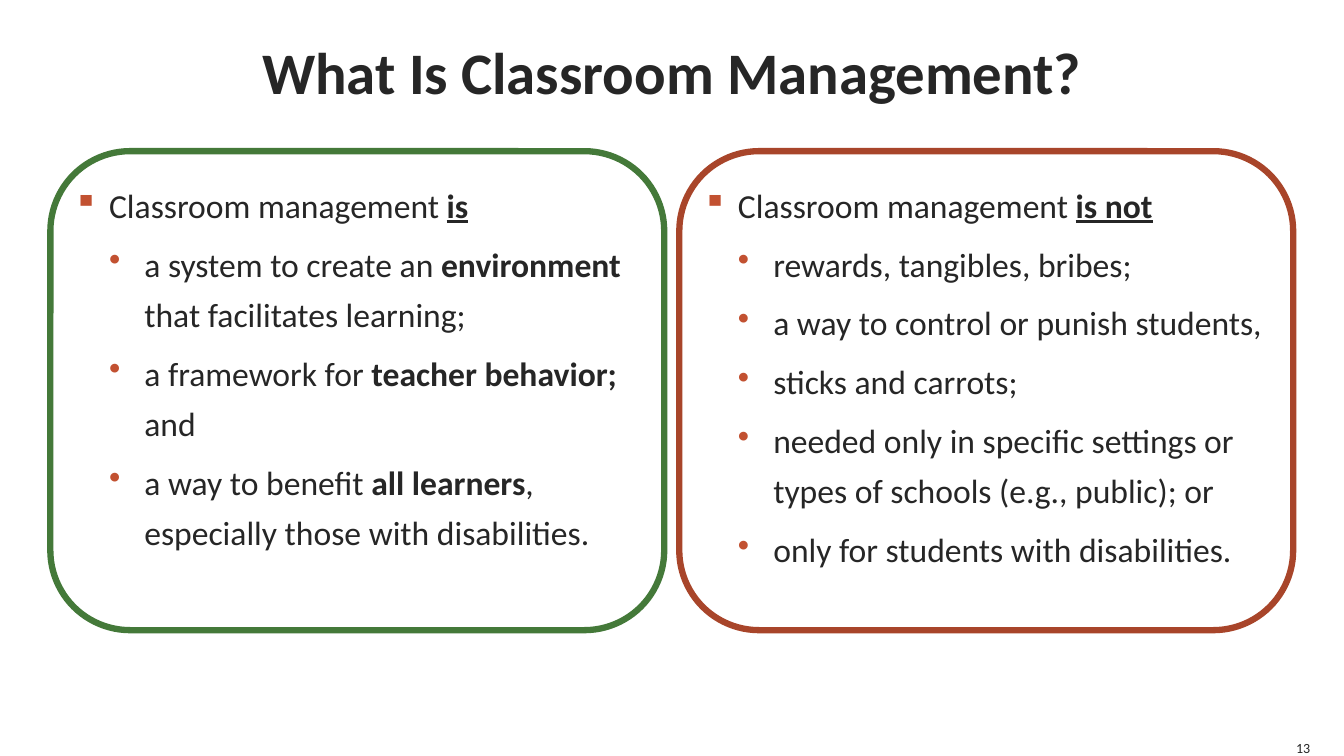
"""Build the slide that contrasts what classroom management is and is not."""
from dataclasses import dataclass

import pptx
import pptx.dml.color
import pptx.enum.shapes
import pptx.enum.text
import pptx.oxml.ns
import pptx.util
from lxml import etree

Cm = pptx.util.Cm
Pt = pptx.util.Pt
ALIGN = pptx.enum.text.PP_ALIGN
ANCHOR = pptx.enum.text.MSO_ANCHOR

COLORS = {"text": "262626", "bullet": "C25131", "is": "447939", "is not": "A8452A"}
FONT = "Calibri"
BULLETS = ("▪", "•")
INDENT = Cm(0.89)
MARGIN, GAP = Cm(1.27), Cm(0.38)
PANEL_TOP, PANEL_WIDTH, PANEL_HEIGHT = Cm(3.81), Cm(15.47), Cm(12.07)


@dataclass(frozen=True)
class Panel:
    """One side of the comparison; each point is plain, bold, plain text."""

    verb: str
    points: tuple[tuple[str, ...], ...]


PANELS = (
    Panel("is", (
        ("a system to create an ", "environment", " that facilitates learning;"),
        ("a framework for ", "teacher behavior;", " and"),
        ("a way to benefit ", "all learners", ", especially those with disabilities."),
    )),
    Panel("is not", (
        ("rewards, tangibles, bribes;",),
        ("a way to control or punish students,",),
        ("sticks and carrots;",),
        ("needed only in specific settings or types of schools (e.g., public); or",),
        ("only for students with disabilities.",),
    )),
)


def rgb(name: str) -> pptx.dml.color.RGBColor:
    """Look up a named colour."""
    return pptx.dml.color.RGBColor.from_string(COLORS[name])


def add_text(paragraph, text: str, *, size: float = 24, bold: bool = False,
             underline: bool = False) -> None:
    """Append a formatted run to a paragraph."""
    run = paragraph.add_run()
    run.text = text
    run.font.name = FONT
    run.font.size = Pt(size)
    run.font.bold = bold
    run.font.underline = underline
    run.font.color.rgb = rgb("text")


def prepare_frame(frame, anchor, wrap: bool = True) -> None:
    """Remove the insets and set anchor and wrapping."""
    frame.margin_left = frame.margin_top = frame.margin_right = frame.margin_bottom = 0
    frame.vertical_anchor = anchor
    frame.word_wrap = wrap
    frame.auto_size = pptx.enum.text.MSO_AUTO_SIZE.NONE


def format_bullet(paragraph, level: int) -> None:
    """Give a paragraph its bullet, hanging indent and spacing."""
    qn = pptx.oxml.ns.qn
    paragraph.level = level
    paragraph.alignment = ALIGN.LEFT
    properties = paragraph._p.get_or_add_pPr()
    properties.set("marL", str(INDENT * (level + 1)))
    properties.set("indent", str(-INDENT))
    bullet_color = etree.SubElement(properties, qn("a:buClr"))
    etree.SubElement(bullet_color, qn("a:srgbClr"), val=COLORS["bullet"])
    etree.SubElement(properties, qn("a:buChar"), char=BULLETS[level])
    paragraph.line_spacing = 1.25
    if level:
        paragraph.space_before = Pt(6)


def add_panel(slide, panel: Panel, left: int) -> None:
    """Draw one outlined panel with its heading and points."""
    outline = slide.shapes.add_shape(
        pptx.enum.shapes.MSO_SHAPE.ROUNDED_RECTANGLE, left, PANEL_TOP, PANEL_WIDTH, PANEL_HEIGHT)
    outline.shadow.inherit = False
    outline.fill.background()
    outline.line.color.rgb = rgb(panel.verb)
    outline.line.width = Pt(4.5)
    frame = outline.text_frame
    prepare_frame(frame, ANCHOR.TOP)
    heading = frame.paragraphs[0]
    format_bullet(heading, 0)
    add_text(heading, "Classroom management ")
    add_text(heading, panel.verb, bold=True, underline=True)
    for point in panel.points:
        paragraph = frame.add_paragraph()
        format_bullet(paragraph, 1)
        for position, part in enumerate(point):
            add_text(paragraph, part, bold=position == 1)


def main() -> None:
    """Build and save the slide."""
    deck = pptx.Presentation()
    deck.slide_width, deck.slide_height = Cm(33.87), Cm(19.05)
    slide = deck.slides.add_slide(deck.slide_layouts[5])

    title = slide.shapes.title
    title.left, title.top, title.width, title.height = MARGIN, 0, Cm(31.32), Cm(3.56)
    prepare_frame(title.text_frame, ANCHOR.MIDDLE)
    question = title.text_frame.paragraphs[0]
    question.alignment = ALIGN.CENTER
    add_text(question, "What Is Classroom Management?", size=42, bold=True)

    for column, panel in enumerate(PANELS):
        add_panel(slide, panel, MARGIN + column * (PANEL_WIDTH + GAP))

    page_number = slide.shapes.add_textbox(Cm(32.59), Cm(18.62), Cm(0.43), Cm(0.43)).text_frame
    prepare_frame(page_number, ANCHOR.BOTTOM, wrap=False)
    page_number.paragraphs[0].alignment = ALIGN.RIGHT
    add_text(page_number.paragraphs[0], "13", size=10)

    deck.save("out.pptx")


if __name__ == "__main__":
    main()
